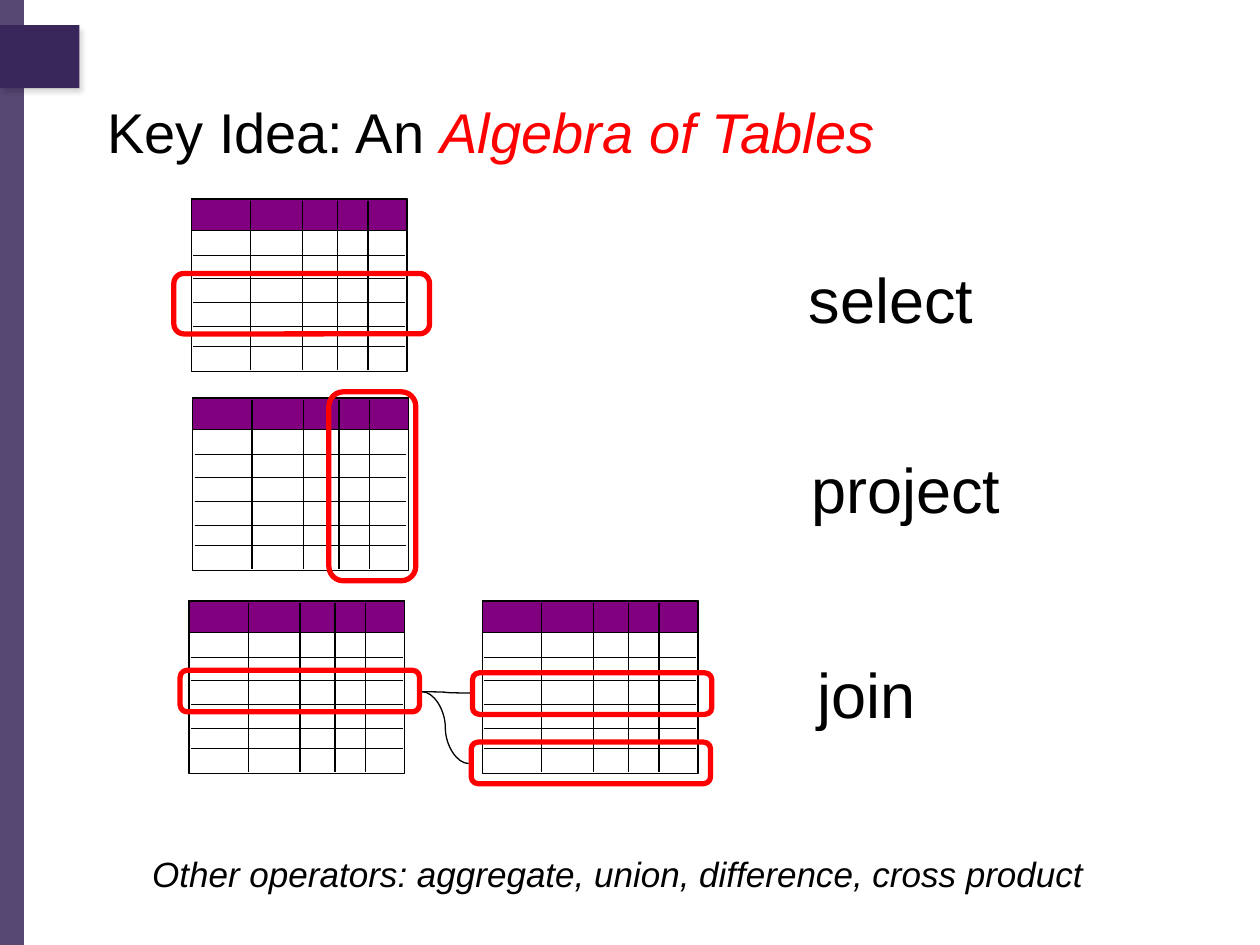
from typing import NamedTuple

import pptx
import pptx.dml.color
import pptx.enum.shapes
import pptx.enum.text
import pptx.oxml
import pptx.oxml.ns
import pptx.util
from pptx.dml.color import RGBColor

BLACK = RGBColor(0x00, 0x00, 0x00)
WHITE = RGBColor(0xFF, 0xFF, 0xFF)
RED = RGBColor(0xFF, 0x00, 0x00)
PURPLE = RGBColor(0x80, 0x00, 0x80)
INDIGO = RGBColor(0x39, 0x27, 0x5B)

FONT = "Arial"
THIN, THICK = 0.75, 3

# The slide is a grid of 100 columns by 75 rows of square cells.
COLUMNS, ROWS = 100, 75
CELL = pptx.util.Inches(0.1)

SHAPE = pptx.enum.shapes.MSO_SHAPE
CONNECTOR = pptx.enum.shapes.MSO_CONNECTOR
ANCHOR = pptx.enum.text.MSO_ANCHOR


class Box(NamedTuple):
    left: float
    top: float
    width: float
    height: float


class Point(NamedTuple):
    x: float
    y: float


class Label(NamedTuple):
    text: str
    box: Box
    size: float = 36
    italic: bool = False


# Measures of one small table, from its top left corner
TABLE_WIDTH, TABLE_HEIGHT, HEADER_HEIGHT = 17.1, 13.7, 2.5
ROW_LINES = (2.5, 4.5, 6.3, 8.2, 10.1, 11.7)
COLUMN_LINES = (4.7, 8.8, 11.6, 14)
LINE_INSET = 0.15

TABLES = (Point(15.2, 15.8), Point(15.3, 31.6), Point(15, 47.7), Point(38.3, 47.7))
HIGHLIGHTS = (
    Box(13.8, 21.7, 20.3, 4.8),
    Box(26.1, 31.1, 6.9, 15),
    Box(37.5, 53.4, 19, 3.3),
    Box(14.3, 53.2, 19, 3.3),
    Box(37.4, 58.9, 19, 3.3),
)
JOIN_START = Point(33.5, 54.9)
JOIN_ENDS = (Point(37.3, 55), Point(37.2, 60.6))
LABELS = (
    Label("select", Box(63.2, 20.2, 30.9, 7)),
    Label("project", Box(63.4, 35.3, 30.9, 7)),
    Label("join", Box(63.9, 51.5, 30.9, 7)),
    Label(
        "Other operators: aggregate, union, difference, cross product",
        Box(11.1, 67.2, 85.5, 4.4), size=20, italic=True,
    ),
)


def grid(*cells: float) -> list[int]:
    """Turn grid cells into slide lengths."""
    return [round(c * CELL) for c in cells]


def add_box(s, box: Box, fill=None, line=None, width=THIN, kind=SHAPE.RECTANGLE):
    sp = s.shapes.add_shape(kind, *grid(*box))
    sp.shadow.inherit = False
    if fill is None:
        sp.fill.background()
    else:
        sp.fill.solid()
        sp.fill.fore_color.rgb = fill
    if line is None:
        sp.line.fill.background()
    else:
        sp.line.color.rgb = line
        sp.line.width = pptx.util.Pt(width)
    return sp


def add_line(s, start: Point, end: Point, kind=CONNECTOR.STRAIGHT) -> None:
    line = s.shapes.add_connector(kind, *grid(*start, *end))
    line.line.color.rgb = BLACK
    line.line.width = pptx.util.Pt(THIN)
    pptx.oxml.ns.qn("a:effectLst")
    line._element.spPr.append(
        pptx.oxml.parse_xml(f"<a:effectLst {pptx.oxml.ns.nsdecls('a')}/>")
    )


def add_text(p, text: str, size=32, color=BLACK, italic=False) -> None:
    r = p.add_run()
    r.text = text
    r.font.name = FONT
    r.font.size = pptx.util.Pt(size)
    r.font.color.rgb = color
    r.font.italic = italic


def add_label(s, label: Label) -> None:
    tf = s.shapes.add_textbox(*grid(*label.box)).text_frame
    tf.word_wrap = True
    add_text(tf.paragraphs[0], label.text, size=label.size, italic=label.italic)


def add_small_table(s, at: Point) -> None:
    add_box(s, Box(*at, TABLE_WIDTH, TABLE_HEIGHT), WHITE, BLACK)
    add_box(s, Box(*at, TABLE_WIDTH, HEADER_HEIGHT), PURPLE, BLACK)
    left, right = at.x + LINE_INSET, at.x + TABLE_WIDTH - LINE_INSET
    top, bottom = at.y + LINE_INSET, at.y + TABLE_HEIGHT - LINE_INSET
    for row in ROW_LINES:
        add_line(s, Point(left, at.y + row), Point(right, at.y + row))
    for column in COLUMN_LINES:
        add_line(s, Point(at.x + column, top), Point(at.x + column, bottom))


def add_side_band(s) -> None:
    ns = pptx.oxml.ns.nsdecls("a")
    band = add_box(s, Box(0, 0, 1.9, ROWS), INDIGO)
    color = band._element.spPr.find(".//" + pptx.oxml.ns.qn("a:srgbClr"))
    color.append(pptx.oxml.parse_xml(f'<a:alpha {ns} val="85000"/>'))

    tab = add_box(s, Box(0, 2, 6.3, 5), INDIGO)
    effects = tab._element.spPr.find(pptx.oxml.ns.qn("a:effectLst"))
    effects.append(pptx.oxml.parse_xml(
        f'<a:outerShdw {ns} blurRad="38100" dist="38100" dir="3600000">'
        '<a:srgbClr val="000000"><a:alpha val="15000"/></a:srgbClr></a:outerShdw>'
    ))


def add_title(s) -> None:
    title = s.shapes.title
    title.left, title.top, title.width, title.height = grid(7.5, 8.3, 85.9, 4.2)
    tf = title.text_frame
    tf.auto_size = pptx.enum.text.MSO_AUTO_SIZE.NONE
    tf.vertical_anchor = ANCHOR.MIDDLE
    p = tf.paragraphs[0]
    p.alignment = pptx.enum.text.PP_ALIGN.LEFT
    add_text(p, "Key Idea: An ")
    add_text(p, "Algebra of Tables", color=RED, italic=True)


def main() -> None:
    prs = pptx.Presentation()
    prs.slide_width, prs.slide_height = grid(COLUMNS, ROWS)
    s = prs.slides.add_slide(prs.slide_layouts.get_by_name("Title Only"))
    add_side_band(s)
    add_title(s)
    for at in TABLES:
        add_small_table(s, at)
    for box in HIGHLIGHTS:
        add_box(s, box, line=RED, width=THICK, kind=SHAPE.ROUNDED_RECTANGLE)
    for end in JOIN_ENDS:
        add_line(s, JOIN_START, end, CONNECTOR.CURVE)
    for label in LABELS:
        add_label(s, label)
    prs.save("out.pptx")


if __name__ == "__main__":
    main()
